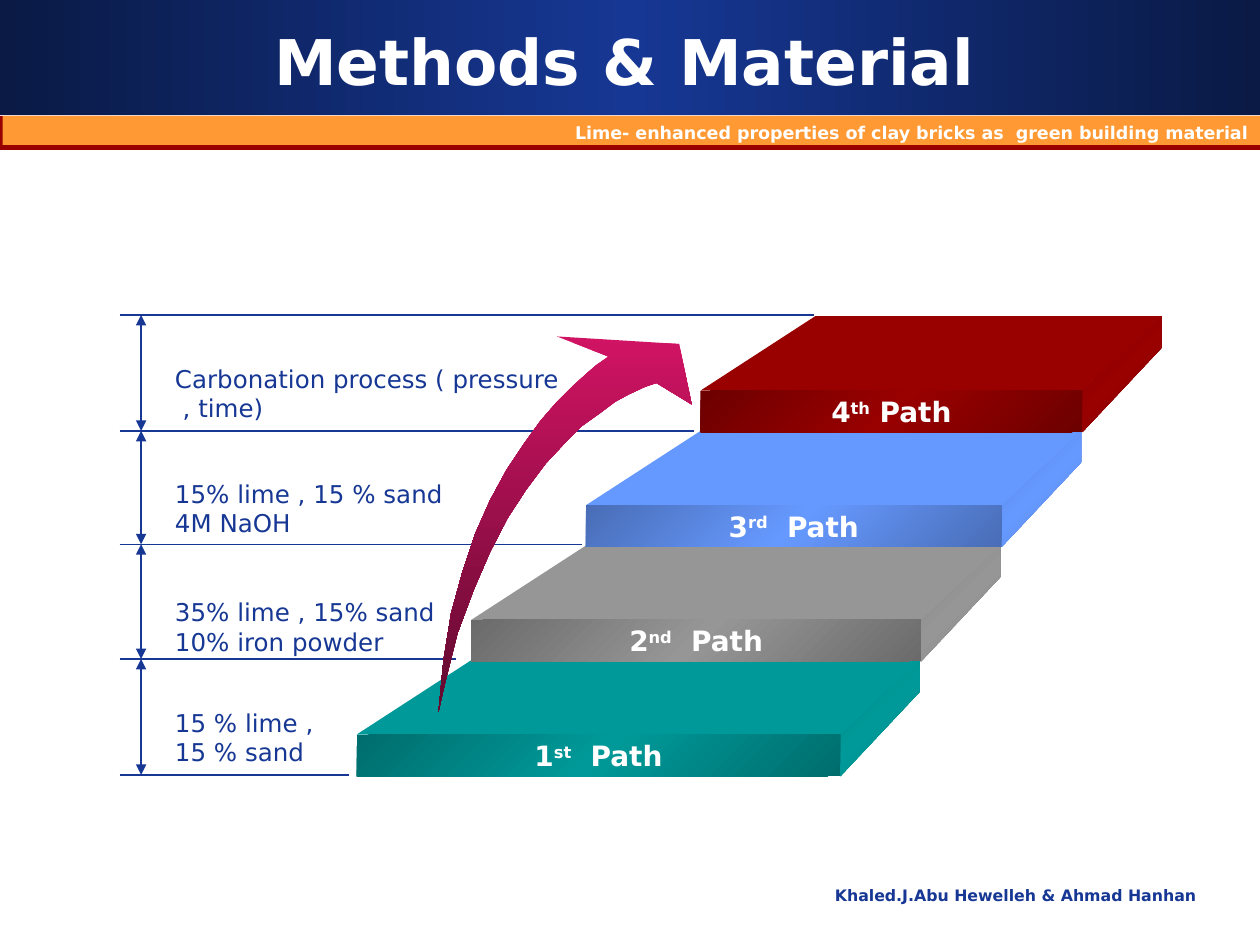
import pptx
import pptx.dml.color
import pptx.enum.shapes
import pptx.enum.text
import pptx.oxml.ns
import pptx.util
from lxml import etree

Inches = pptx.util.Inches
ALIGN = pptx.enum.text.PP_ALIGN
ANCHOR = pptx.enum.text.MSO_ANCHOR
RECTANGLE = pptx.enum.shapes.MSO_SHAPE.RECTANGLE
qn = pptx.oxml.ns.qn

COLORS = {
    "navy": "163794", "navy_dark": "0A1A45", "orange": "FF9933", "white": "FFFFFF",
    "red": "990000", "red_side": "850000", "red_front": "6D0000",
    "blue": "6699FF", "blue_side": "5985DE", "blue_front": "496DB6",
    "gray": "969696", "gray_side": "828282", "gray_front": "6B6B6B",
    "teal": "009999", "teal_side": "008585", "teal_front": "006D6D",
    "pink": "D11364", "pink_dark": "600A2E",
}
PATHS = [
    ("teal", ("1", "st", "  Path")),
    ("gray", ("2", "nd", "  Path")),
    ("blue", ("3", "rd", "  Path")),
    ("red", ("4", "th", " Path")),
]
GUIDES = [(2.5, 6.46), (3.42, 5.51), (4.32, 4.62), (5.23, 3.62), (6.15, 2.77)]
INGREDIENTS = [
    (2.84, 3.3, ["Carbonation process ( pressure", " , time)"], False),
    (3.75, 2.49, ["15% lime , 15 % sand", "4M NaOH"], False),
    (4.69, 2.42, ["35% lime , 15% sand", "10% iron powder"], True),
    (5.57, 1.35, ["15 % lime , 15 % sand"], True),
]
SWOOSH = [
    (0, 2.98), (0.04, 2.57), (0.1, 2.2), (0.19, 1.87), (0.29, 1.57), (0.41, 1.3),
    (0.54, 1.06), (0.68, 0.85), (0.81, 0.67), (0.94, 0.52), (1.06, 0.4), (1.17, 0.3),
    (1.25, 0.23), (1.35, 0.16), (0.94, 0), (1.91, 0.06), (2.01, 0.54), (1.73, 0.37),
    (1.64, 0.4), (1.51, 0.46), (1.4, 0.52), (1.28, 0.61), (1.14, 0.71), (1, 0.85),
    (0.85, 1.01), (0.7, 1.21), (0.55, 1.44), (0.41, 1.71), (0.28, 2.01), (0.15, 2.36),
    (0.05, 2.76),
]


def rgb(name):
    """Return the named colour."""
    return pptx.dml.color.RGBColor.from_string(COLORS[name])


def paint(shape, *names, angle=0):
    """Fill a shape with one colour, or with evenly spaced gradient stops."""
    shape.shadow.inherit = False
    shape.line.fill.background()
    if len(names) == 1:
        shape.fill.solid()
        shape.fill.fore_color.rgb = rgb(names[0])
        return
    shape.fill.gradient()
    shape.fill.gradient_angle = (360 - angle) % 360
    stops = shape._element.spPr.find(".//" + qn("a:gsLst"))
    for stop in list(stops):
        stops.remove(stop)
    for index, name in enumerate(names):
        position = str(round(100000 * index / (len(names) - 1)))
        stop = etree.SubElement(stops, qn("a:gs"), pos=position)
        etree.SubElement(stop, qn("a:srgbClr"), val=COLORS[name])


def write(shape, paragraphs, size=14, color="navy", bold=False, align=ALIGN.LEFT,
          anchor=ANCHOR.TOP, wrap=True):
    """Write paragraphs; a tuple is split into runs, the second one raised."""
    frame = shape.text_frame
    frame.auto_size = pptx.enum.text.MSO_AUTO_SIZE.NONE
    frame.word_wrap = wrap
    frame.vertical_anchor = anchor
    for index, content in enumerate(paragraphs):
        paragraph = frame.add_paragraph() if index else frame.paragraphs[0]
        paragraph.alignment = align
        pieces = content if isinstance(content, tuple) else (content,)
        for order, piece in enumerate(pieces):
            run = paragraph.add_run()
            run.text = piece
            run.font.name = "DejaVu Sans"
            run.font.size = pptx.util.Pt(size)
            run.font.bold = bold
            run.font.color.rgb = rgb(color)
            if order == 1:
                run.font._element.set("baseline", "30000")


def add_box(slide, left, top, width, height):
    """Add a rectangle."""
    return slide.shapes.add_shape(
        RECTANGLE, Inches(left), Inches(top), Inches(width), Inches(height))


def add_text(slide, left, top, width, height, paragraphs, **formats):
    """Add a text box with formatted paragraphs."""
    box = slide.shapes.add_textbox(
        Inches(left), Inches(top), Inches(width), Inches(height))
    write(box, paragraphs, **formats)


def add_outline(slide, left, top, points):
    """Add a closed polygon whose points are relative to left and top."""
    corners = [(Inches(left + x), Inches(top + y)) for x, y in points]
    builder = slide.shapes.build_freeform(*corners[0])
    builder.add_line_segments(corners[1:], close=True)
    return builder.convert_to_shape()


def add_rule(slide, x1, y1, x2, y2, arrows=False):
    """Add a thin line, with arrowheads at both ends on request."""
    rule = slide.shapes.add_connector(
        pptx.enum.shapes.MSO_CONNECTOR.STRAIGHT,
        Inches(x1), Inches(y1), Inches(x2), Inches(y2))
    rule.line.color.rgb = rgb("navy")
    rule.line.width = pptx.util.Pt(0.75)
    if arrows:
        for end in ("a:headEnd", "a:tailEnd"):
            etree.SubElement(rule.line._ln, qn(end), type="triangle")
    etree.SubElement(rule._element.spPr, qn("a:effectLst"))


def add_header(slide, left, top, width):
    """Place the title band and the subject strip below it."""
    paint(add_box(slide, left, top, width, 0.91), "navy_dark", "navy", "navy_dark")
    paint(add_box(slide, left, top + 0.92, width, 0.27), "red")
    subject = add_box(slide, left + 0.02, top + 0.92, width - 0.02, 0.23)
    paint(subject, "orange")
    write(subject, ["Lime- enhanced properties of clay bricks as  green building material"],
          size=10, color="white", bold=True, align=ALIGN.RIGHT)
    title = slide.shapes.title
    title.left, title.top = Inches(left + 0.33), Inches(top + 0.17)
    title.width, title.height = Inches(9.25), Inches(0.62)
    write(title, ["Methods & Material"], size=36, color="white", bold=True,
          align=ALIGN.CENTER, anchor=ANCHOR.MIDDLE)
    slide.shapes._spTree.append(title._element)


def add_scale(slide, left):
    """Place the level lines, the spans between them and the ingredients."""
    for level, right in GUIDES:
        add_rule(slide, left, level, right, level)
    for (upper, _), (lower, _) in zip(GUIDES, GUIDES[1:]):
        add_rule(slide, left + 0.17, upper, left + 0.17, lower, arrows=True)
    for top, width, lines, wrap in INGREDIENTS:
        add_text(slide, left + 0.34, top, width, 0.57, lines, wrap=wrap)


def add_step(slide, left, top, width, color, label):
    """Place one step: its side, its tread and its labelled front."""
    rise, front_height, back_left, back_right = 0.59, 0.33, 0.91, width + 0.63
    bottom = rise + front_height
    side = add_outline(slide, left, top, [
        (back_right, 0.25), (width, bottom), (width, rise), (back_right, 0)])
    paint(side, color + "_side", color, color + "_side", angle=45)
    tread = add_outline(slide, left, top, [
        (width, rise), (0, rise), (back_left, 0), (back_right, 0)])
    paint(tread, color)
    front = add_box(slide, left, top + rise, width, front_height)
    paint(front, color + "_front", color, color + "_front", angle=45)
    write(front, [label], size=16, color="white", bold=True, align=ALIGN.CENTER,
          anchor=ANCHOR.MIDDLE, wrap=False)


def add_stairs(slide, left, top):
    """Place the four steps from the lowest up, and the rising arrow."""
    for index, (color, label) in enumerate(PATHS):
        add_step(slide, left + 0.91 * index, top - 0.91 * index,
                 3.84 - 0.27 * index, color, label)
    paint(add_outline(slide, left + 0.65, top - 2.57, SWOOSH),
          "pink", "pink_dark", angle=90)


def main():
    """Build and save the slide."""
    deck = pptx.Presentation()
    deck.slide_width, deck.slide_height = Inches(10), Inches(7.5)
    slide = deck.slides.add_slide(deck.slide_layouts[5])
    add_header(slide, 0, 0, 10)
    add_scale(slide, 0.95)
    add_stairs(slide, 2.83, 5.24)
    add_text(slide, 5.24, 6.98, 4.35, 0.44, ["Khaled.J.Abu Hewelleh & Ahmad Hanhan"],
             size=9, bold=True, align=ALIGN.RIGHT)
    deck.save("out.pptx")


if __name__ == "__main__":
    main()
